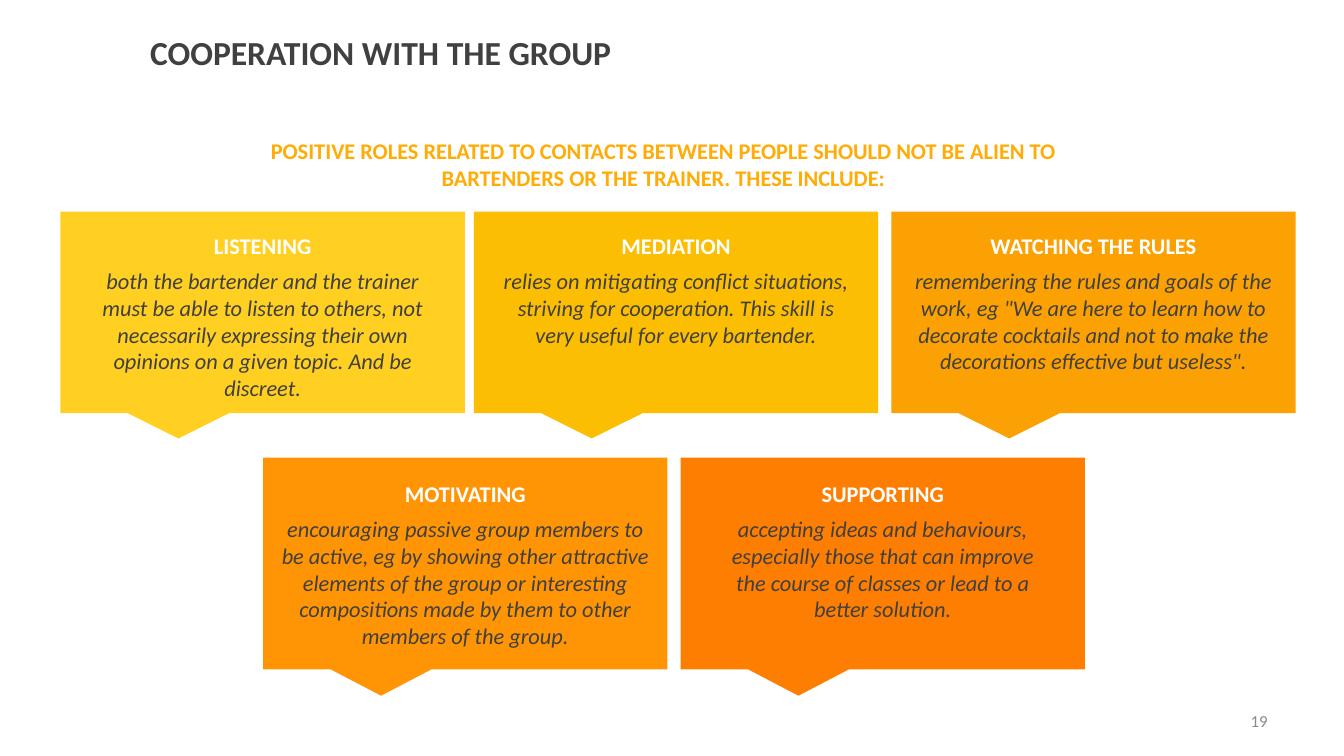
from pptx import Presentation
from pptx.dml.color import RGBColor as RGB
from pptx.enum.shapes import MSO_SHAPE as Shape
from pptx.enum.text import MSO_ANCHOR as Anchor, PP_ALIGN as Align
from pptx.util import Inches, Pt

WHITE = RGB(0xFF, 0xFF, 0xFF)
DARK = RGB(0x40, 0x40, 0x40)
GREY = RGB(0x89, 0x89, 0x89)
GOLD = RGB(0xFF, 0xAC, 0x06)
LEMON = RGB(0xFF, 0xCF, 0x21)
AMBER = RGB(0xFB, 0xBE, 0x03)
HONEY = RGB(0xFB, 0xA1, 0x03)
ORANGE = RGB(0xFF, 0x94, 0x05)
FLAME = RGB(0xFE, 0x7E, 0x01)

TITLE = "COOPERATION WITH THE GROUP"
INTRO = ("POSITIVE ROLES RELATED TO CONTACTS BETWEEN PEOPLE SHOULD NOT BE "
         "ALIEN TO BARTENDERS OR THE TRAINER. THESE INCLUDE:")
NUMBER = "19"

CARD_WIDTH = 4.01
ROWS = [
    {"top": 2.1, "height": 2, "inset": 0.15, "cards": [
        (0.6, LEMON, 3.48, 5, "LISTENING",
         "both the bartender and the trainer must be able to listen to "
         "others, not necessarily expressing their own opinions on a given "
         "topic. And be discreet."),
        (4.7, AMBER, 3.67, 3, "MEDIATION",
         "relies on mitigating conflict situations, striving for "
         "cooperation. This skill is very useful for every bartender."),
        (8.84, HONEY, 3.77, 4, "WATCHING THE RULES",
         "remembering the rules and goals of the work, eg \"We are here to "
         "learn how to decorate cocktails and not to make the decorations "
         "effective but useless\"."),
    ]},
    {"top": 4.54, "height": 2.1, "inset": 0.17, "cards": [
        (2.61, ORANGE, 3.9, 5, "MOTIVATING",
         "encouraging passive group members to be active, eg by showing "
         "other attractive elements of the group or interesting "
         "compositions made by them to other members of the group."),
        (6.75, FLAME, 3.51, 4, "SUPPORTING",
         "accepting ideas and behaviours, especially those that can improve "
         "the course of classes or lead to a better solution."),
    ]},
]

HEAD = {"size": Pt(16), "bold": True}
BODY = {"size": Pt(16), "italic": True}


def add_text(slide, box, parts, align=Align.CENTER, anchor=Anchor.TOP):
    frame = slide.shapes.add_textbox(*map(Inches, box)).text_frame
    frame.word_wrap = True
    frame.vertical_anchor = anchor
    for i, (text, color, style, after) in enumerate(parts):
        para = frame.add_paragraph() if i else frame.paragraphs[0]
        para.alignment = align
        para.space_after = Pt(after)
        run = para.add_run()
        run.text = text
        for name, value in {"name": "Calibri", **style}.items():
            setattr(run.font, name, value)
        run.font.color.rgb = color


def add_card(slide, row, card):
    left, fill, width, lines, head, body = card
    box = (left, row["top"], CARD_WIDTH, row["height"])
    shape = slide.shapes.add_shape(Shape.RECTANGULAR_CALLOUT,
                                   *map(Inches, box))
    shape.shadow.inherit = False
    shape.fill.solid()
    shape.fill.fore_color.rgb = fill
    shape.line.fill.background()
    inner = (left + (CARD_WIDTH - width) / 2, row["top"] + row["inset"],
             width, 0.45 + 0.27 * lines)
    add_text(slide, inner, [(head, WHITE, HEAD, 6), (body, DARK, BODY, 12)])


def main():
    deck = Presentation()
    deck.slide_width, deck.slide_height = Inches(13.33), Inches(7.5)
    slide = deck.slides.add_slide(deck.slide_layouts[6])
    add_text(slide, (1.39, 0.21, 8.66, 0.62),
             [(TITLE, DARK, {"size": Pt(24), "bold": True}, 0)],
             Align.LEFT, Anchor.MIDDLE)
    add_text(slide, (9.56, 6.95, 3.11, 0.4),
             [(NUMBER, GREY, {"size": Pt(12)}, 0)],
             Align.RIGHT, Anchor.MIDDLE)
    add_text(slide, (2.41, 1.31, 8.34, 0.64), [(INTRO, GOLD, HEAD, 12)])
    for row in ROWS:
        for card in row["cards"]:
            add_card(slide, row, card)
    deck.save("out.pptx")


if __name__ == "__main__":
    main()
